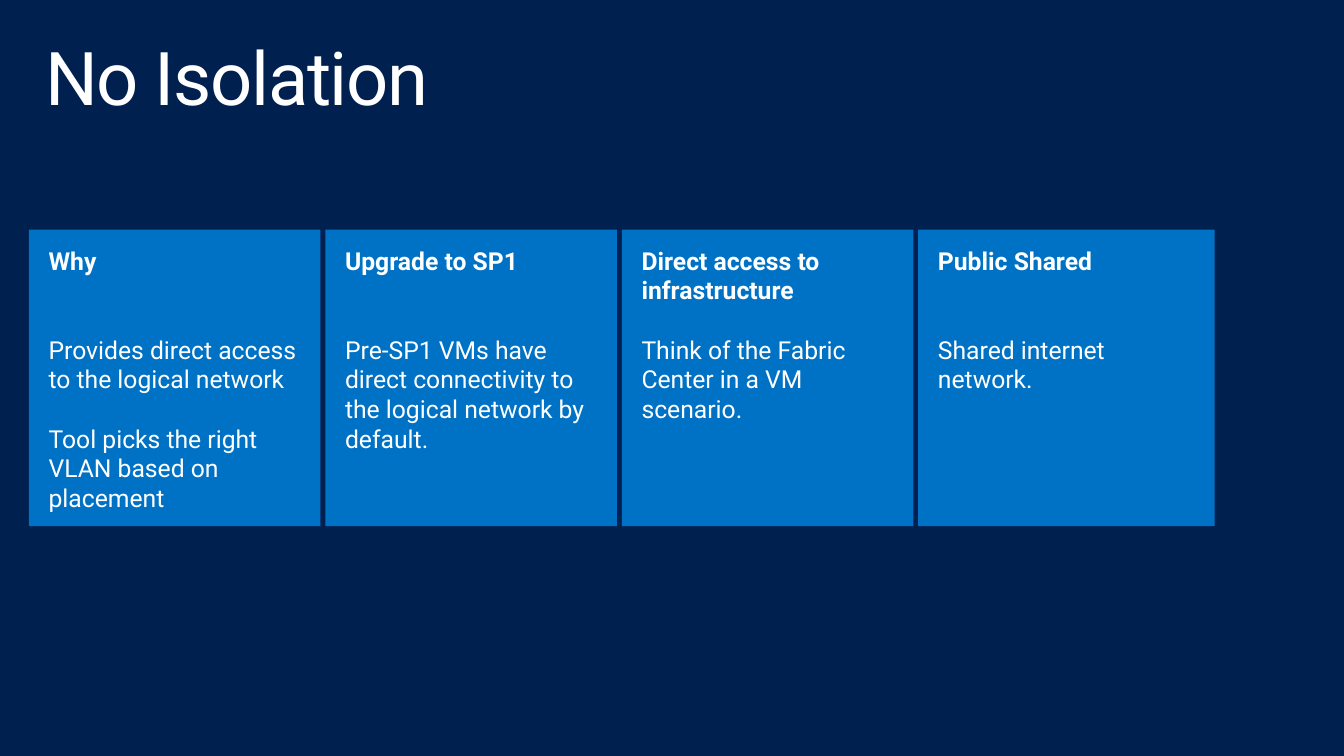
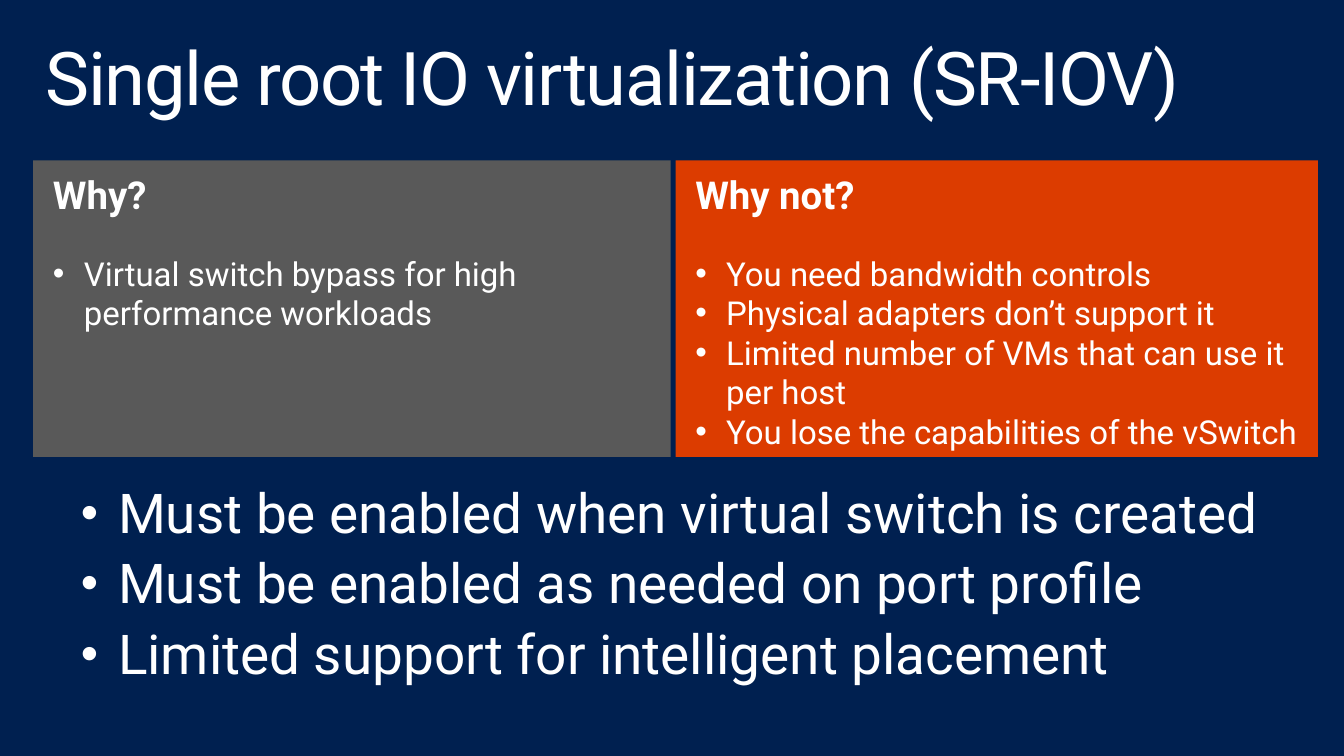
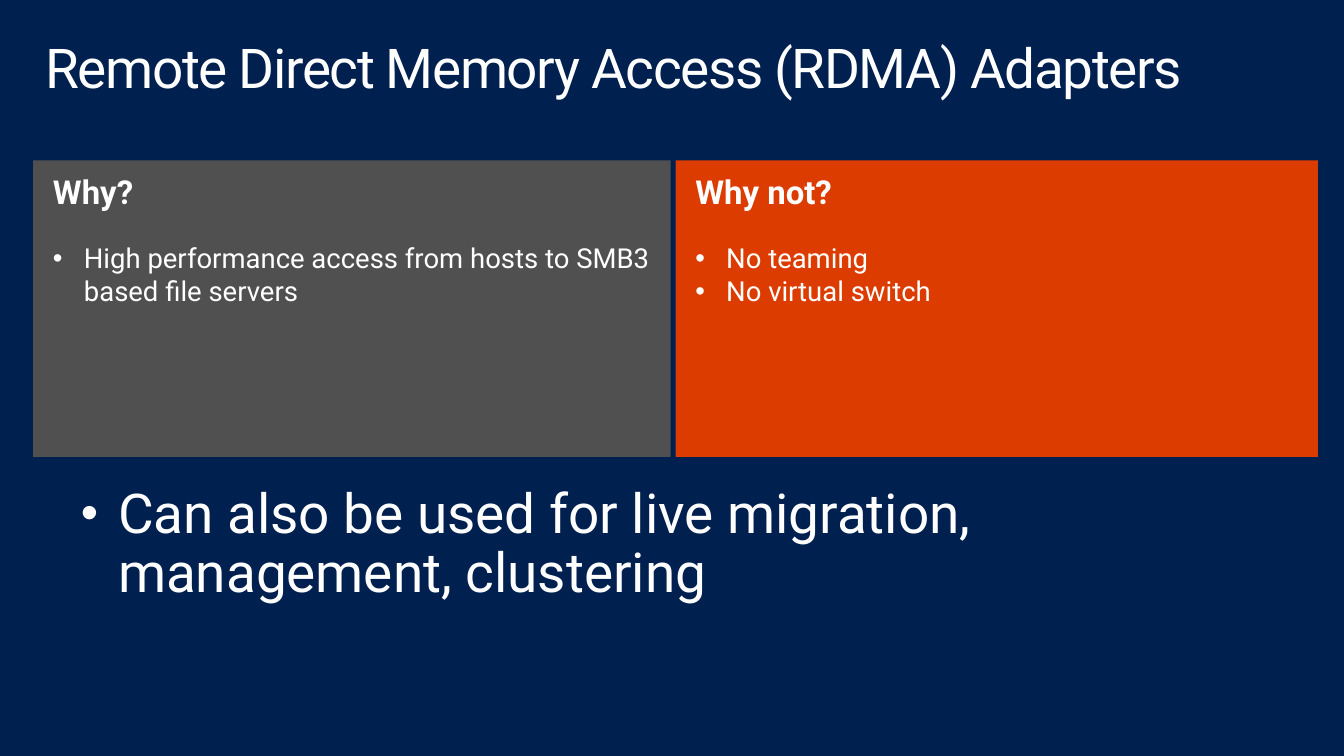
"""Build three slides on network isolation and hardware-assisted networking."""
from dataclasses import dataclass

from lxml import etree
from pptx import Presentation
from pptx.dml.color import RGBColor
from pptx.enum import shapes, text
from pptx.oxml import ns
from pptx.util import Pt


@dataclass(frozen=True)
class Theme:
    navy: str = "002050"
    blue: str = "0072C6"
    orange: str = "DC3C00"
    white: str = "FFFFFF"
    font: str = "Roboto"
    title_size: int = 54
    card_size: int = 18
    note_size: int = 40
    line_height: float = 1.2
    tight: float = 0.9


theme = Theme()


def add_box(page, frame, inset, fill=None):
    """Add a top-left anchored text area, filled when a colour is given."""
    left, top, width, height = map(Pt, frame)
    if fill:
        box = page.shapes.add_shape(shapes.MSO_SHAPE.RECTANGLE, left, top, width, height)
        box.shadow.inherit = False
        box.fill.solid()
        box.fill.fore_color.rgb = RGBColor.from_string(fill)
        box.line.fill.background()
    else:
        box = page.shapes.add_textbox(left, top, width, height)
    body = box.text_frame
    body.word_wrap = True
    body.vertical_anchor = text.MSO_ANCHOR.TOP
    body.margin_left = body.margin_right = Pt(inset[0])
    body.margin_top = body.margin_bottom = Pt(inset[1])
    return body


def add_para(body, words, size, bold=False, spacing=1.0, before=0, indent=0, bullet_scale=100):
    """Fill the first empty paragraph or append one, with a bullet when indented."""
    para = body.paragraphs[0]
    if para.runs:
        para = body.add_paragraph()
    para.alignment = text.PP_ALIGN.LEFT
    para.line_spacing = spacing
    para.space_before = Pt(before)
    span = para.add_run()
    span.text = words
    span.font.name = theme.font
    span.font.size = Pt(size)
    span.font.bold = bold
    span.font.color.rgb = RGBColor.from_string(theme.white)
    if indent:
        props = para._p.get_or_add_pPr()
        props.set("marL", str(Pt(indent)))
        props.set("indent", str(-Pt(indent)))
        for tag, key, value in (
            ("a:buSzPct", "val", str(bullet_scale * 1000)),
            ("a:buFont", "typeface", "Arial"),
            ("a:buChar", "char", "•"),
        ):
            etree.SubElement(props, ns.qn(tag)).set(key, value)
    return span


deck = Presentation()
deck.slide_width, deck.slide_height = Pt(979.2), Pt(550.8)

pages = []
for heading, size in (
    ("No Isolation", theme.title_size),
    ("Single root IO virtualization (SR-IOV)", theme.title_size),
    ("Remote Direct Memory Access (RDMA) Adapters", 40),
):
    page = deck.slides.add_slide(deck.slide_layouts[6])
    page.background.fill.solid()
    page.background.fill.fore_color.rgb = RGBColor.from_string(theme.navy)
    title = add_box(page, (21.6, 23, 936, 72), (11.5, 7.2))
    span = add_para(title, heading, size, spacing=theme.tight)
    span.font._element.set("spc", "-100")
    pages.append(page)

cards = [
    ("Why", 2, ["Provides direct access to the logical network",
                "Tool picks the right VLAN based on placement"]),
    ("Upgrade to SP1", 2,
     ["Pre-SP1 VMs have direct connectivity to the logical network by default."]),
    ("Direct access to infrastructure", 1, ["Think of the Fabric Center in a VM scenario."]),
    ("Public Shared", 2, ["Shared internet network."]),
]
card_line = theme.card_size * theme.line_height
card_pitch = 216
for index, (heading, gap_lines, details) in enumerate(cards):
    width = card_pitch if index == len(cards) - 1 else card_pitch - 3.6
    card = add_box(pages[0], (21 + index * card_pitch, 167.4, width, 216), (14.4, 11.5), theme.blue)
    add_para(card, heading, theme.card_size, bold=True)
    for number, detail in enumerate(details):
        gap = card_line * (1 if number else gap_lines)
        add_para(card, detail, theme.card_size, before=gap)

comparisons = [
    (pages[1], "595959", 28, 24,
     ["Virtual switch bypass for high performance workloads"],
     ["You need bandwidth controls",
      "Physical adapters don’t support it",
      "Limited number of VMs that can use it per host",
      "You lose the capabilities of the vSwitch"],
     165,
     ["Must be enabled when virtual switch is created",
      "Must be enabled as needed on port profile",
      "Limited support for intelligent placement"]),
    (pages[2], "505050", 24, 20,
     ["High performance access from hosts to SMB3 based file servers"],
     ["No teaming", "No virtual switch"],
     101.5,
     ["Can also be used for live migration, management, clustering"]),
]
for page, gray, head_size, item_size, pros, cons, note_height, notes in comparisons:
    for heading, items, fill, left, width in (
        ("Why?", pros, gray, 24.2, 464.4),
        ("Why not?", cons, theme.orange, 492.2, 468),
    ):
        panel = add_box(page, (left, 116.9, width, 216), (14.4, 11.5), fill)
        add_para(panel, heading, head_size, bold=True, spacing=theme.tight)
        for number, item in enumerate(items):
            gap = 0 if number else item_size * theme.line_height * theme.tight
            add_para(panel, item, item_size, before=gap, indent=22.5)
    body = add_box(page, (47.5, 347, 881.3, note_height), (11.5, 7.2))
    for number, note in enumerate(notes):
        add_para(body, note, theme.note_size, spacing=theme.tight,
                 before=8 if number else 0, indent=27, bullet_scale=90)

deck.save("out.pptx")
